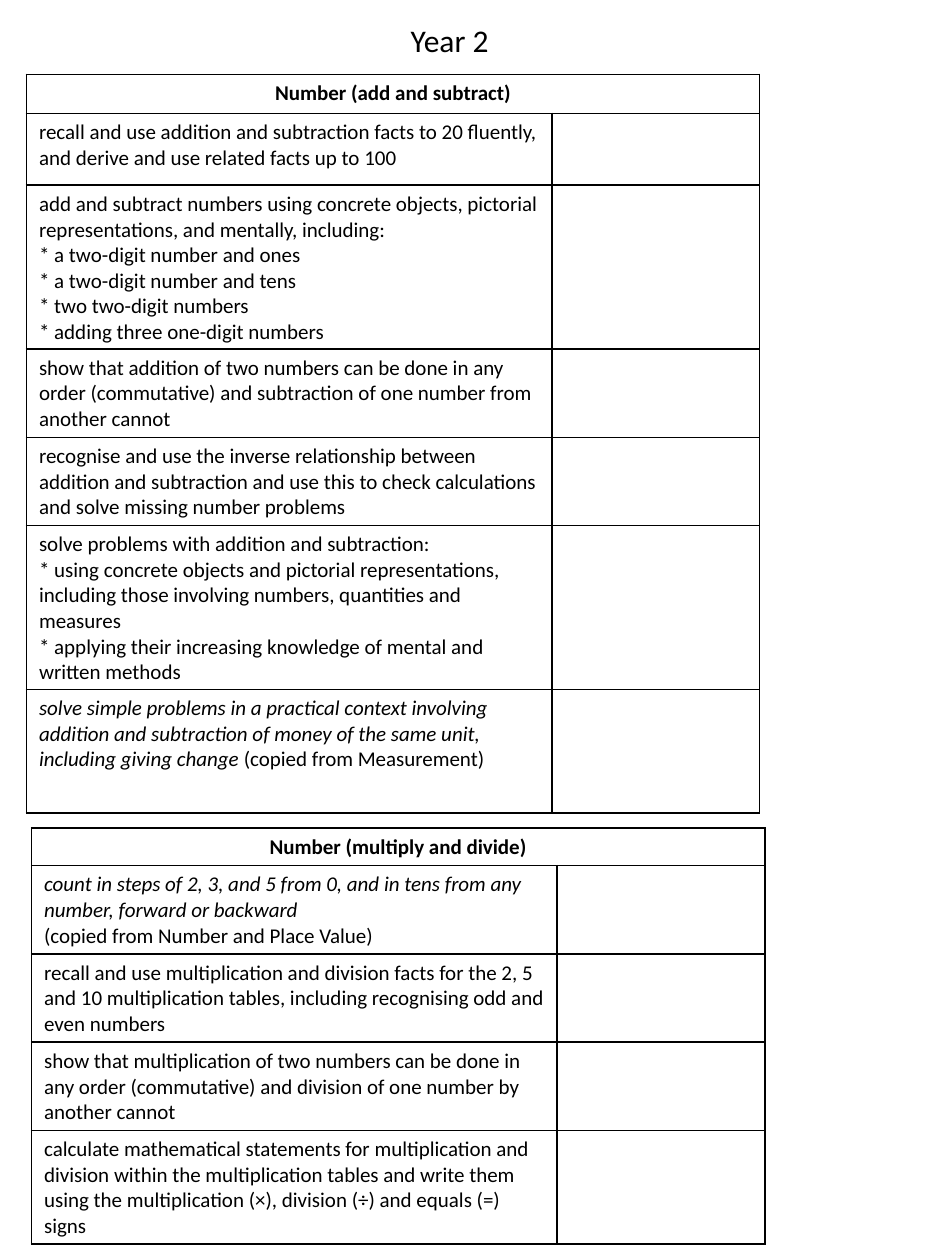
from dataclasses import dataclass

from lxml import etree
from pptx import Presentation
from pptx import util as u
from pptx.dml.color import RGBColor
from pptx.enum import text
from pptx.oxml import ns

BLACK = RGBColor(0x00, 0x00, 0x00)
FONT = "Calibri"
COLUMN_WIDTHS = (4.17, 1.65)


@dataclass
class Line:
    wording: str
    italic: bool = False
    upright_tail: str = ""  # upright words that end an italic line


@dataclass
class Objective:
    height: float
    lines: list[Line]


@dataclass
class Checklist:
    heading: str
    left: float
    top: float
    heading_height: float
    objectives: list[Objective]


CHECKLISTS = [
    Checklist("Number (add and subtract)", 0.21, 0.59, 0.31, [
        Objective(0.57, [Line("recall and use addition and subtraction facts to 20 fluently, "
                              "and derive and use related facts up to 100")]),
        Objective(0.52, [
            Line("add and subtract numbers using concrete objects, pictorial "
                 "representations, and mentally, including:"),
            Line("* a two-digit number and ones"),
            Line("* a two-digit number and tens"),
            Line("* two two-digit numbers"),
            Line("* adding three one-digit numbers"),
        ]),
        Objective(0.55, [Line("show that addition of two numbers can be done in any order "
                              "(commutative) and subtraction of one number from another cannot")]),
        Objective(0.64, [Line("recognise and use the inverse relationship between addition and "
                              "subtraction and use this to check calculations and solve missing "
                              "number problems")]),
        Objective(0.98, [
            Line("solve problems with addition and subtraction:"),
            Line("* using concrete objects and pictorial representations, including those "
                 "involving numbers, quantities and measures"),
            Line("* applying their increasing knowledge of mental and written methods"),
        ]),
        Objective(0.98, [Line("solve simple problems in a practical context involving addition "
                              "and subtraction of money of the same unit, including giving change ",
                              italic=True, upright_tail="(copied from Measurement)")]),
    ]),
    Checklist("Number (multiply and divide)", 0.25, 6.57, 0.29, [
        Objective(0.54, [
            Line("count in steps of 2, 3, and 5 from 0, and in tens from any number, "
                 "forward or backward", italic=True),
            Line("(copied from Number and Place Value)"),
        ]),
        Objective(0.47, [Line("recall and use multiplication and division facts for the 2, 5 and "
                              "10 multiplication tables, including recognising odd and even "
                              "numbers")]),
        Objective(0.47, [Line("show that multiplication of two numbers can be done in any order "
                              "(commutative) and division of one number by another cannot")]),
        Objective(0.47, [Line("calculate mathematical statements for multiplication and division "
                              "within the multiplication tables and write them using the "
                              "multiplication (×), division (÷) and equals (=) signs")]),
    ]),
]


def set_font(paragraph, size: float, bold: bool = False, italic: bool = False) -> None:
    font = paragraph.font
    font.name, font.size = FONT, u.Pt(size)
    font.bold, font.italic = bold, italic
    font.color.rgb = BLACK


def outline_cell(cell) -> None:
    """Clear the fill and rule all four sides with a 1 pt line."""
    cell.fill.background()
    properties = cell._tc.get_or_add_tcPr()
    for position, side in enumerate(("lnL", "lnR", "lnT", "lnB")):
        border = etree.Element(ns.qn(f"a:{side}"), w=str(u.Pt(1)))
        fill = etree.SubElement(border, ns.qn("a:solidFill"))
        etree.SubElement(fill, ns.qn("a:srgbClr"), val=str(BLACK))
        properties.insert(position, border)


def write_lines(cell, lines: list[Line]) -> None:
    frame = cell.text_frame
    for index, line in enumerate(lines):
        paragraph = frame.add_paragraph() if index else frame.paragraphs[0]
        set_font(paragraph, 12, italic=line.italic)
        paragraph.add_run().text = line.wording
        if line.upright_tail:
            tail = paragraph.add_run()
            tail.text = line.upright_tail
            tail.font.italic = False


def add_checklist(slide, checklist: Checklist) -> None:
    heights = [checklist.heading_height] + [o.height for o in checklist.objectives]
    table = slide.shapes.add_table(
        len(heights), len(COLUMN_WIDTHS), u.Inches(checklist.left), u.Inches(checklist.top),
        u.Inches(sum(COLUMN_WIDTHS)), u.Inches(sum(heights))).table
    table.first_row = table.horz_banding = False
    for column, width in zip(table.columns, COLUMN_WIDTHS):
        column.width = u.Inches(width)
    for row, height in zip(table.rows, heights):
        row.height = u.Inches(height)
    for cell in table.iter_cells():
        outline_cell(cell)

    # Heading across both columns
    heading = table.cell(0, 0)
    heading.merge(table.cell(0, 1))
    heading.text = checklist.heading
    paragraph = heading.text_frame.paragraphs[0]
    paragraph.alignment = text.PP_ALIGN.CENTER
    set_font(paragraph, 12, bold=True)

    # Objectives, each with an empty cell beside it
    for row, objective in enumerate(checklist.objectives, start=1):
        write_lines(table.cell(row, 0), objective.lines)


def add_title(slide, wording: str) -> None:
    title = slide.shapes.title
    title.left, title.top = u.Inches(3.16), u.Inches(0.12)
    title.width, title.height = u.Inches(0.83), u.Inches(0.4)
    frame = title.text_frame
    frame.text = wording
    frame.word_wrap = False
    frame.auto_size = text.MSO_AUTO_SIZE.SHAPE_TO_FIT_TEXT
    frame.vertical_anchor = text.MSO_ANCHOR.TOP
    frame.paragraphs[0].alignment = text.PP_ALIGN.LEFT
    set_font(frame.paragraphs[0], 18)


def main() -> None:
    deck = Presentation()
    deck.slide_width, deck.slide_height = u.Inches(7.5), u.Inches(10)
    slide = deck.slides.add_slide(deck.slide_layouts[5])
    add_title(slide, "Year 2")
    for checklist in CHECKLISTS:
        add_checklist(slide, checklist)
    deck.save("out.pptx")


if __name__ == "__main__":
    main()
